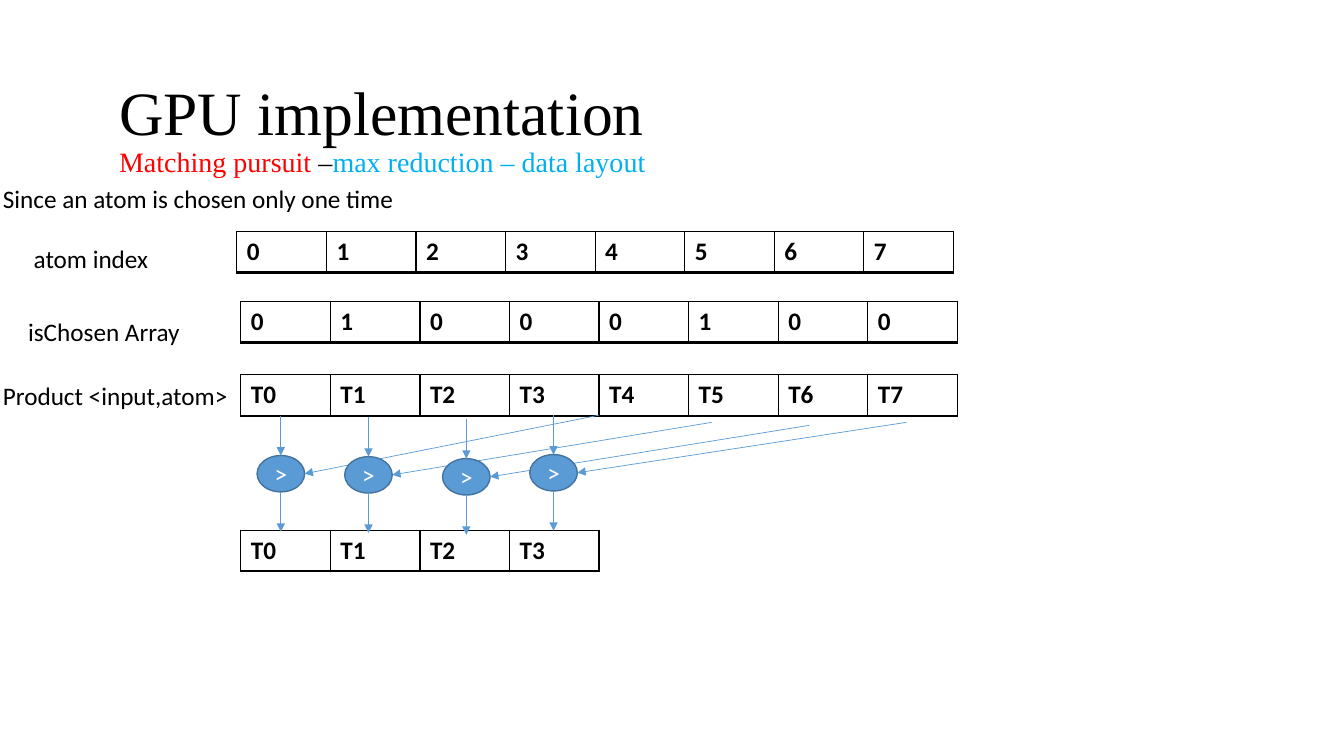
from dataclasses import dataclass

from lxml import etree
from pptx import Presentation
from pptx.dml.color import RGBColor
from pptx.enum.shapes import MSO_CONNECTOR, MSO_SHAPE
from pptx.enum.text import MSO_ANCHOR, MSO_AUTO_SIZE, PP_ALIGN
from pptx.oxml.ns import qn
from pptx.slide import Slide
from pptx.util import Pt

LINE = MSO_CONNECTOR.STRAIGHT
OVAL = MSO_SHAPE.OVAL
MIDDLE = MSO_ANCHOR.MIDDLE
FIXED = MSO_AUTO_SIZE.NONE
LEFT, CENTER = PP_ALIGN.LEFT, PP_ALIGN.CENTER

COLORS = {"black": "000000", "white": "FFFFFF", "red": "FF0000",
          "cyan": "00B0F0", "blue": "5B9BD5", "edge": "43739E"}
SANS, SERIF = "Calibri", "Times New Roman"
CELL_W, CELL_H = 64, 29.2
NODE_W, NODE_H = 34, 26
DROP = 28.4


@dataclass
class Array:
    left: float
    top: float
    cells: list[str]


@dataclass
class Label:
    left: float
    top: float
    width: float
    text: str


@dataclass
class Node:
    """A comparison; (far_x, far_y) is where its second input starts."""
    left: float
    top: float
    far_x: float
    far_y: float


THREADS = [f"T{i}" for i in range(8)]
ARRAYS = [
    Array(169.2, 165.6, list("01234567")),
    Array(172, 215.3, list("01000100")),
    Array(172, 267.8, THREADS),
    Array(172, 378.7, THREADS[:4]),
]
LABELS = [
    Label(-5, 127.4, 311, "Since an atom is chosen only one time"),
    Label(17, 170.6, 97.5, "atom index"),
    Label(13, 222.5, 128.2, "isChosen Array"),
    Label(-5, 267.8, 177, "Product <input,atom>"),
]
NODES = [
    Node(183.6, 325.4, 427.7, 296.6),
    Node(246.2, 326.2, 508.3, 301.7),
    Node(316.1, 327.6, 578.2, 303.8),
    Node(378.4, 324.7, 647.3, 301.7),
]
TITLE = [("GPU implementation", 44, "black"), ("Matching pursuit", 20, "red"),
         (" –", 20, "black"), ("max reduction – data layout", 20, "cyan")]


def rgb(name: str) -> RGBColor:
    return RGBColor.from_string(COLORS[name])


def style(run, size: float, color: str, face: str = SANS, bold: bool = False) -> None:
    font = run.font
    font.name, font.size, font.bold = face, Pt(size), bold
    font.color.rgb = rgb(color)


def add_title(slide: Slide) -> None:
    title = slide.shapes.title
    title.left, title.top, title.width, title.height = map(Pt, (77.8, 41, 828, 104.4))
    frame = title.text_frame
    frame.auto_size, frame.vertical_anchor = FIXED, MIDDLE
    para = frame.paragraphs[0]
    para.alignment, para.line_spacing = LEFT, 0.9
    for i, (text, size, color) in enumerate(TITLE):
        if i == 1:
            para.add_line_break()
        run = para.add_run()
        run.text = text
        style(run, size, color, SERIF)


def add_label(slide: Slide, label: Label) -> None:
    box = slide.shapes.add_textbox(Pt(label.left), Pt(label.top), Pt(label.width), Pt(29))
    frame = box.text_frame
    frame.word_wrap = False
    frame.text = label.text
    style(frame.paragraphs[0].runs[0], 18, "black")


def add_border(cell) -> None:
    props = cell._tc.get_or_add_tcPr()
    for side, width in (("L", 1), ("R", 1), ("T", 1), ("B", 2)):
        line = etree.SubElement(props, qn(f"a:ln{side}"), w=str(Pt(width)))
        fill = etree.SubElement(line, qn("a:solidFill"))
        etree.SubElement(fill, qn("a:srgbClr"), val=COLORS["black"])


def add_array(slide: Slide, array: Array) -> None:
    count = len(array.cells)
    table = slide.shapes.add_table(1, count, Pt(array.left), Pt(array.top),
                                   Pt(count * CELL_W), Pt(CELL_H)).table
    table.first_row = table.horz_banding = False
    for i, text in enumerate(array.cells):
        table.columns[i].width = Pt(CELL_W)
        cell = table.cell(0, i)
        cell.text = text
        style(cell.text_frame.paragraphs[0].runs[0], 18, "black", bold=True)
        add_border(cell)
        cell.fill.background()


def add_arrow(slide: Slide, x1: float, y1: float, x2: float, y2: float) -> None:
    arrow = slide.shapes.add_connector(LINE, Pt(x1), Pt(y1), Pt(x2), Pt(y2))
    arrow.line.color.rgb = rgb("blue")
    arrow.line.width = Pt(0.5)
    etree.SubElement(arrow.line._get_or_add_ln(), qn("a:tailEnd"), type="triangle")
    etree.SubElement(arrow._element.spPr, qn("a:effectLst"))


def add_node(slide: Slide, node: Node) -> None:
    """Draw the comparison with its two inputs and its output."""
    oval = slide.shapes.add_shape(OVAL, Pt(node.left), Pt(node.top), Pt(NODE_W), Pt(NODE_H))
    oval.shadow.inherit = False
    oval.fill.solid()
    oval.fill.fore_color.rgb = rgb("blue")
    oval.line.color.rgb = rgb("edge")
    oval.line.width = Pt(1)
    frame = oval.text_frame
    frame.vertical_anchor = MIDDLE
    frame.text = ">"
    para = frame.paragraphs[0]
    para.alignment = CENTER
    style(para.runs[0], 18, "white")

    mid, base = node.left + NODE_W / 2, node.top + NODE_H
    add_arrow(slide, mid, node.top - DROP, mid, node.top)
    add_arrow(slide, node.far_x, node.far_y, node.left + NODE_W, node.top + NODE_H / 2)
    add_arrow(slide, mid, base, mid, base + DROP)


def main() -> None:
    deck = Presentation()
    deck.slide_width, deck.slide_height = Pt(960), Pt(540)
    slide = deck.slides.add_slide(deck.slide_layouts[5])
    add_title(slide)
    for array in ARRAYS:
        add_array(slide, array)
    for label in LABELS:
        add_label(slide, label)
    for node in NODES:
        add_node(slide, node)
    deck.save("out.pptx")


if __name__ == "__main__":
    main()
